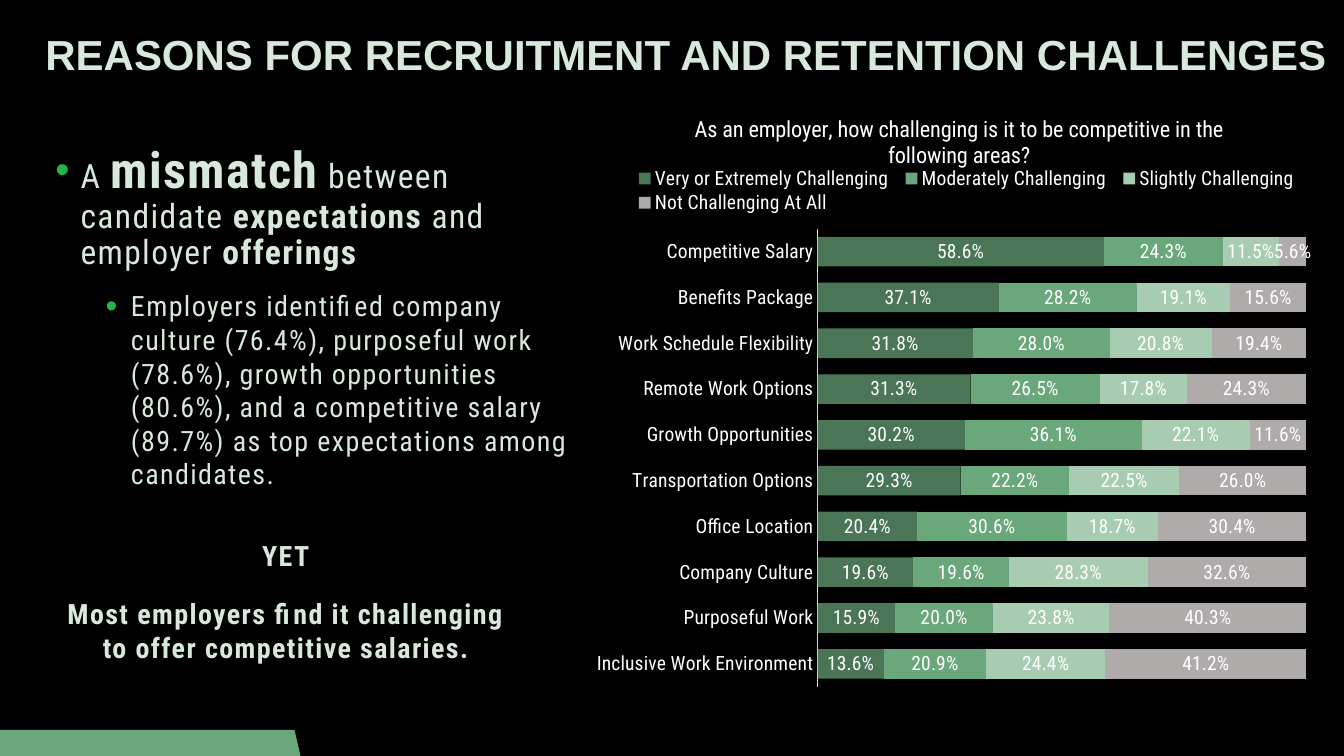
from lxml import etree
from pptx import Presentation
from pptx.chart.data import CategoryChartData
from pptx.dml.color import RGBColor
from pptx.enum.chart import XL_CHART_TYPE, XL_LEGEND_POSITION, XL_TICK_MARK
from pptx.enum.text import MSO_ANCHOR, MSO_AUTO_SIZE, PP_ALIGN
from pptx.oxml.ns import qn
from pptx.util import Inches, Pt

BLACK = RGBColor(0x00, 0x00, 0x00)
WHITE = RGBColor(0xFF, 0xFF, 0xFF)
MINT = RGBColor(0xD8, 0xE8, 0xDD)
GREEN = RGBColor(0x6A, 0xA8, 0x7B)
PALE = RGBColor(0xA8, 0xCC, 0xB2)
GREY = RGBColor(0xAF, 0xAB, 0xAB)
RULE = RGBColor(0xD9, 0xD9, 0xD9)
BULLET = "21B54C"
FONT = "Roboto Condensed"
STACKED = XL_CHART_TYPE.BAR_STACKED
TOP = XL_LEGEND_POSITION.TOP
NO_TICK = XL_TICK_MARK.NONE
LEFT, CENTER = PP_ALIGN.LEFT, PP_ALIGN.CENTER
MIDDLE = MSO_ANCHOR.MIDDLE
NO_FIT = MSO_AUTO_SIZE.NONE

deck = Presentation()
deck.slide_width, deck.slide_height = Inches(13.33), Inches(7.5)
slide = deck.slides.add_slide(deck.slide_layouts[5])
slide.background.fill.solid()
slide.background.fill.fore_color.rgb = BLACK


def place(x, y, *size):
    """Turn percentages of the slide's width and height into lengths."""
    sides = (deck.slide_width, deck.slide_height) * 2
    return [int(side * part / 100) for side, part in zip(sides, (x, y, *size))]


def style(font, size, color, name=FONT, bold=False):
    font.size, font.name, font.bold = Pt(size), name, bold
    font.color.rgb = color


# Footer band
corners = [place(*spot) for spot in
           [(0, 100), (22.36, 100), (21.91, 96.53), (0, 96.53)]]
draft = slide.shapes.build_freeform(*corners[0])
draft.add_line_segments(corners[1:], close=True)
band = draft.convert_to_shape()
band.shadow.inherit = False
band.fill.solid()
band.fill.fore_color.rgb = GREEN
band.line.fill.background()

# Title
title = slide.shapes.title
title.left, title.top, title.width, title.height = place(3.38, 4.13, 95.8, 6.8)
frame = title.text_frame
frame.text = "REASONS FOR RECRUITMENT AND RETENTION CHALLENGES"
frame.auto_size, frame.vertical_anchor = NO_FIT, MIDDLE
frame.margin_left = frame.margin_right = 0
frame.margin_top = frame.margin_bottom = 0
para = frame.paragraphs[0]
para.alignment, para.line_spacing = LEFT, 0.9
style(para.runs[0].font, 30, MINT, "Arial", True)

# Chart
AREAS = ["Inclusive Work Environment", "Purposeful Work", "Company Culture",
         "Office Location", "Transportation Options", "Growth Opportunities",
         "Remote Work Options", "Work Schedule Flexibility",
         "Benefits Package", "Competitive Salary"]
LEVELS = [
    ("Very or Extremely Challenging", GREEN,
     [0.136, 0.159, 0.196, 0.204, 0.293, 0.302, 0.313, 0.318, 0.371, 0.586]),
    ("Moderately Challenging", GREEN,
     [0.209, 0.2, 0.196, 0.306, 0.222, 0.361, 0.265, 0.28, 0.282, 0.243]),
    ("Slightly Challenging", PALE,
     [0.244, 0.238, 0.283, 0.187, 0.225, 0.221, 0.178, 0.208, 0.191, 0.115]),
    ("Not Challenging At All", GREY,
     [0.412, 0.403, 0.326, 0.304, 0.26, 0.116, 0.243, 0.194, 0.156, 0.056]),
]
data = CategoryChartData(number_format="0.0%")
data.categories = AREAS
for name, color, values in LEVELS:
    data.add_series(name, values)
chart = slide.shapes.add_chart(
    STACKED, *place(44.41, 12.4, 53.71, 80.13), data).chart
style(chart.font, 14, WHITE)

chart.has_title = True
heading = chart.chart_title.text_frame
heading.text = ("As an employer, how challenging is it to be competitive "
                "in the following areas?")
style(heading.paragraphs[0].runs[0].font, 16, WHITE)

chart.has_legend = True
legend = chart.legend
legend.position, legend.include_in_layout = TOP, False
style(legend.font, 14, WHITE)

axis = chart.category_axis
axis.major_tick_mark = axis.minor_tick_mark = NO_TICK
axis.format.line.color.rgb = RULE
axis.format.line.width = Pt(0.75)
style(axis.tick_labels.font, 14, WHITE)
scale = chart.value_axis
scale.minimum_scale, scale.maximum_scale = 0, 1
scale.has_major_gridlines = scale.visible = False

plot = chart.plots[0]
plot.gap_width, plot.overlap, plot.vary_by_categories = 55, 100, False
for series, (name, color, values) in zip(plot.series, LEVELS):
    series.format.fill.solid()
    series.format.fill.fore_color.rgb = color
    labels = series.data_labels
    labels.show_value = True
    labels.number_format, labels.number_format_is_linked = "0.0%", False
    style(labels.font, 14, WHITE)
shade = next(plot.series[0].format.fill._xPr.iter(qn("a:srgbClr")))
etree.SubElement(shade, qn("a:alpha")).set("val", "70000")

# Fixed places of the bars and the legend, as shares of the chart
area = chart._chartSpace.find(".//" + qn("c:plotArea"))
for node, index, inner, shares in [
        (area, 0, True, (0.303, 0.223, 0.68, 0.756)),
        (legend._element, 1, False, (0.04, 0.12, 0.94, 0.08))]:
    for old in node.findall(qn("c:layout")):
        node.remove(old)
    layout = etree.Element(qn("c:layout"))
    node.insert(index, layout)
    manual = etree.SubElement(layout, qn("c:manualLayout"))
    rules = [("layoutTarget", "inner")] if inner else []
    rules += [("xMode", "edge"), ("yMode", "edge"), *zip("xywh", shares)]
    for tag, value in rules:
        etree.SubElement(manual, qn("c:" + tag)).set("val", str(value))

# Text: each paragraph has its level, indent, line spacing, space after, runs
POINTS = [
    (0, 0.25, 0.9, 0,
     [("A ", 24, False), ("mismatch", 36, True),
      (" between candidate ", 24, False), ("expectations", 24, True),
      (" and employer ", 24, False), ("offerings", 24, True)]),
    (1, 0.75, 1, 6,
     [("Employers identified company culture (76.4%), purposeful work "
       "(78.6%), growth opportunities (80.6%), and a competitive salary "
       "(89.7%) as top expectations among candidates.", 20, False)]),
]
CLOSE = [
    (1, 0.5, 1, 6, [("YET", 20, True)]),
    (1, 0.5, 1, 6, [("Most employers find it challenging to offer "
                     "competitive salaries.", 20, True)]),
]
for spot, paras, listed in [((3.38, 18.53, 41.11, 49.07), POINTS, True),
                            ((0, 70.53, 38.78, 18.13), CLOSE, False)]:
    frame = slide.shapes.add_textbox(*place(*spot)).text_frame
    frame.word_wrap = True
    for count, (level, indent, lines, after, parts) in enumerate(paras):
        para = frame.add_paragraph() if count else frame.paragraphs[0]
        para.level, para.line_spacing = level, lines
        para.space_before, para.space_after = Pt(12), Pt(after)
        para.alignment = LEFT if listed else CENTER
        for words, size, bold in parts:
            run = para.add_run()
            run.text = words
            style(run.font, size, MINT, bold=bold)
            run.font._element.set("spc", "100")
        props = para._p.get_or_add_pPr()
        props.set("marL", str(Inches(indent)))
        props.set("indent", str(Inches(-0.25 if listed else 0)))
        if listed:
            tint = etree.SubElement(props, qn("a:buClr"))
            etree.SubElement(tint, qn("a:srgbClr")).set("val", BULLET)
            etree.SubElement(props, qn("a:buSzPct")).set("val", "120000")
            etree.SubElement(props, qn("a:buFont")).set("typeface", "Arial")
            etree.SubElement(props, qn("a:buChar")).set("char", "•")

deck.save("out.pptx")
